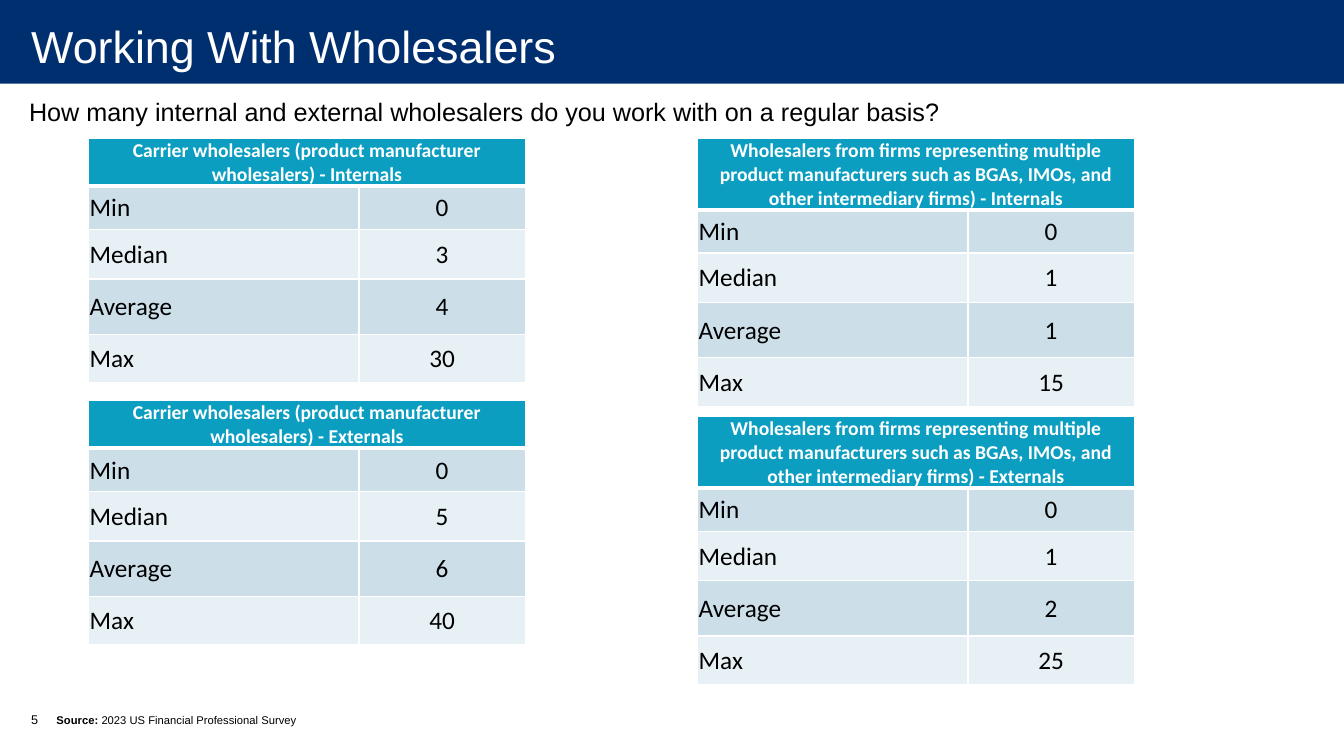
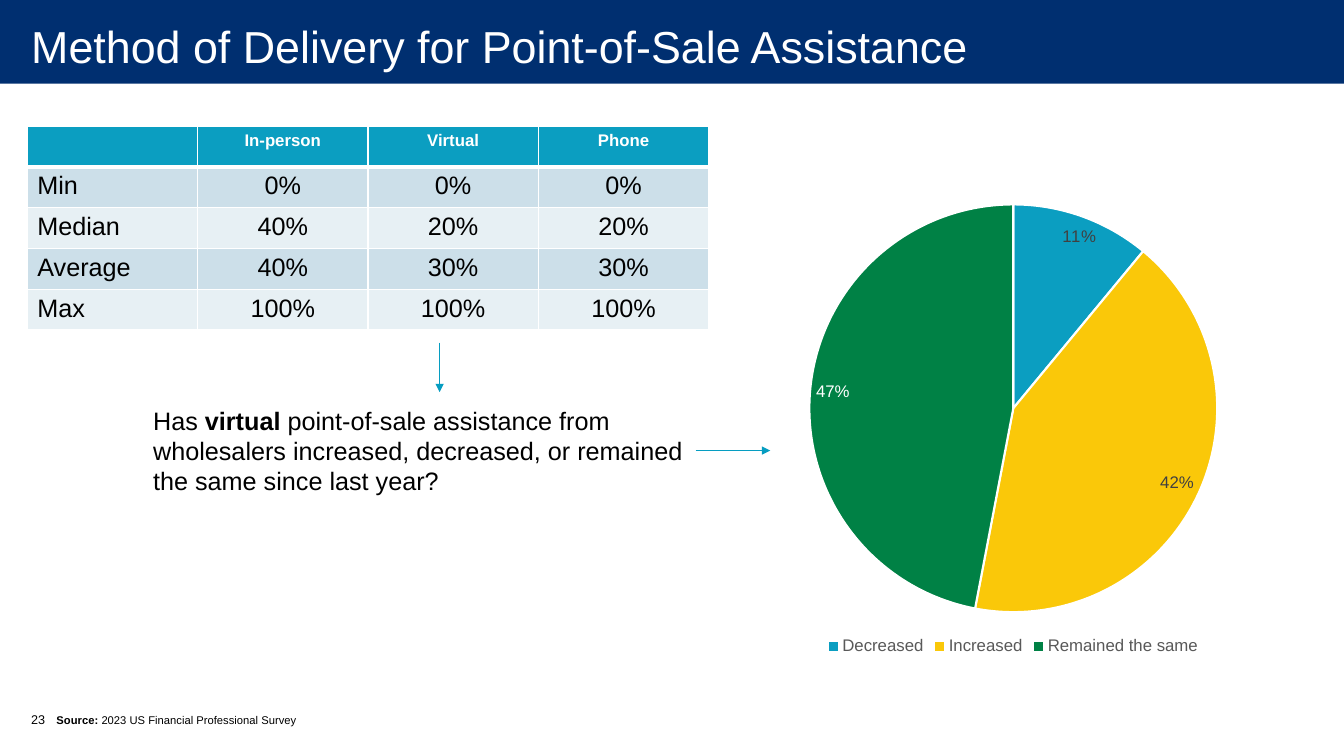
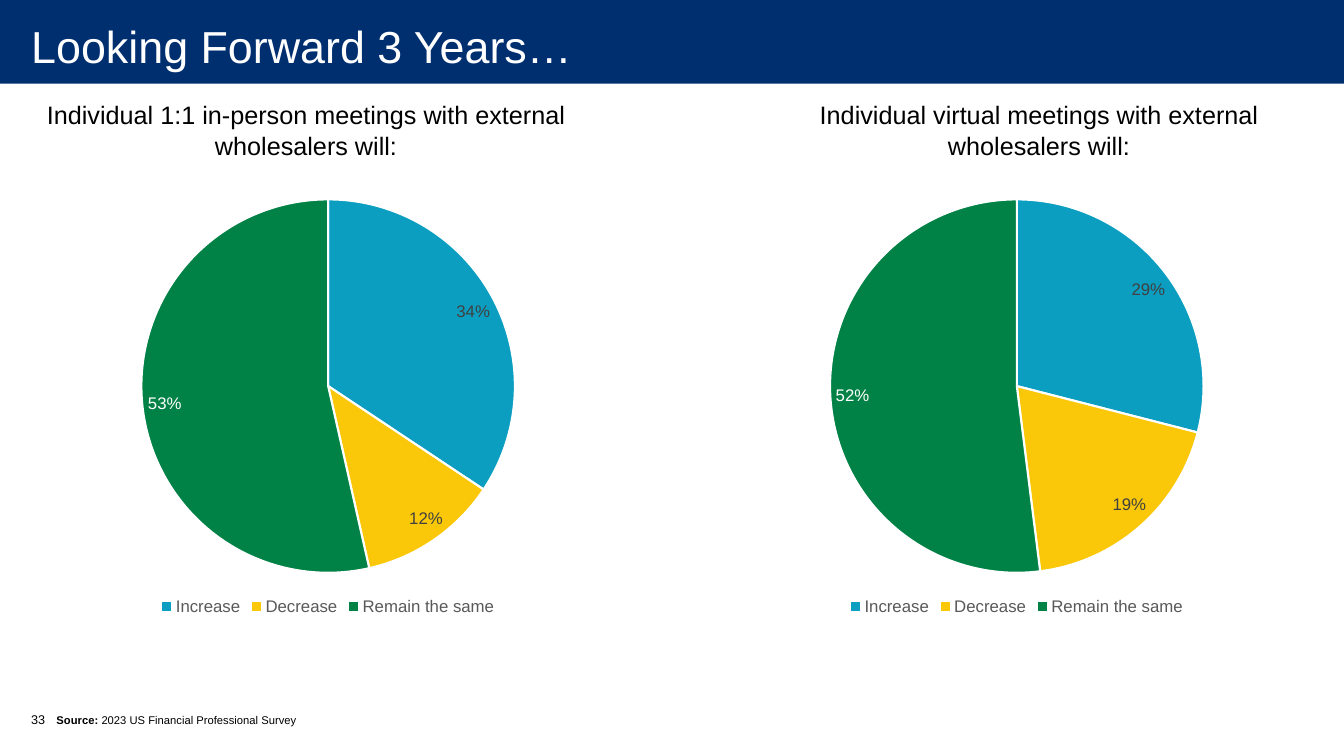
from lxml import etree
from pptx import Presentation
from pptx.chart.data import CategoryChartData
from pptx.dml.color import RGBColor
from pptx.enum import chart as charts, shapes, text
from pptx.oxml.ns import qn
from pptx.util import Inches, Pt

NAVY = RGBColor(0x00, 0x2F, 0x70)
TEAL = RGBColor(0x0B, 0x9E, 0xC1)
ARROW_TEAL = RGBColor(0x06, 0x9D, 0xC1)
YELLOW = RGBColor(0xFA, 0xC8, 0x09)
GREEN = RGBColor(0x00, 0x81, 0x45)
ROW_DARK = RGBColor(0xCC, 0xDF, 0xE9)
ROW_LIGHT = RGBColor(0xE7, 0xF0, 0xF4)
LEGEND_GRAY = RGBColor(0x59, 0x59, 0x59)
LABEL_GRAY = RGBColor(0x40, 0x40, 0x40)
BLACK = RGBColor(0, 0, 0)
WHITE = RGBColor(255, 255, 255)

LEFT, CENTER = text.PP_ALIGN.LEFT, text.PP_ALIGN.CENTER
TOP, MIDDLE, BOTTOM = (text.MSO_ANCHOR.TOP, text.MSO_ANCHOR.MIDDLE,
                       text.MSO_ANCHOR.BOTTOM)

TITLE_STYLE = {"size": 32, "color": WHITE}
BODY_STYLE = {"size": 18, "color": BLACK}
SOURCE_STYLE = {"size": 8, "color": BLACK}
NUMBER_STYLE = {"size": 9, "color": BLACK}

SOURCE = [("Source: ", True), ("2023 US Financial Professional Survey", False)]
STATISTICS = ["Min", "Median", "Average", "Max"]

CARRIERS = "Carrier wholesalers (product manufacturer wholesalers) - "
INTERMEDIARIES = ("Wholesalers from firms representing multiple product manufacturers "
                  "such as BGAs, IMOs, and other intermediary firms) - ")
WHOLESALER_TABLES = [
    (0.88, 1.37, CARRIERS + "Internals", [0, 3, 4, 30]),
    (0.88, 3.97, CARRIERS + "Externals", [0, 5, 6, 40]),
    (6.92, 1.37, INTERMEDIARIES + "Internals", [0, 1, 1, 15]),
    (6.92, 4.13, INTERMEDIARIES + "Externals", [0, 1, 2, 25]),
]
WHOLESALER_QUESTION = ("How many internal and external wholesalers do you work with "
                       "on a regular basis?")
WHOLESALER_COLUMNS = [2.68, 1.65]
WHOLESALER_ROWS = [0.41, 0.43, 0.49, 0.55, 0.48]
TIGHT_CELL = {"margin_left": Inches(0.01), "margin_right": Inches(0.01),
              "margin_top": Inches(0.01), "margin_bottom": 0,
              "vertical_anchor": MIDDLE}

DELIVERY = {"In-person": [0, 40, 40, 100],
            "Virtual": [0, 20, 30, 100],
            "Phone": [0, 20, 30, 100]}
DELIVERY_QUESTION = [
    ("Has ", False), ("virtual", True),
    (" point-of-sale assistance from wholesalers increased, decreased, or remained "
     "the same since last year?", False)]
DELIVERY_CHANGE = {"Decreased": 0.11, "Increased": 0.42, "Remained the same": 0.47}
DELIVERY_ARROWS = [(4.36, 3.4, 4.36, 3.89), (6.9, 4.47, 7.64, 4.47)]

OUTLOOK_CATEGORIES = ["Increase", "Decrease", "Remain the same"]
OUTLOOKS = [
    (0.24, 0.46, "Individual 1:1 in-person meetings with external wholesalers will:",
     [0.34, 0.12, 0.53]),
    (7.51, 7.29, "Individual virtual meetings with external wholesalers will:",
     [0.29, 0.19, 0.52]),
]


def inches(values):
    return [Inches(value) for value in values]


def set_all(target, values):
    for name, value in values.items():
        setattr(target, name, value)


def set_font(font, size, color, name="Arial", bold=False):
    set_all(font, {"size": Pt(size), "name": name, "bold": bold})
    font.color.rgb = color


def write(frame, content, style, align=LEFT):
    paragraph = frame.paragraphs[0]
    paragraph.alignment = align
    runs = [(content, style.get("bold", False))] if isinstance(content, str) else content
    for words, bold in runs:
        run = paragraph.add_run()
        run.text = words
        set_font(run.font, **{**style, "bold": bold})
    return paragraph


def add_text(slide, box, content, style=BODY_STYLE, align=LEFT):
    frame = slide.shapes.add_textbox(*inches(box)).text_frame
    frame.word_wrap = True
    write(frame, content, style, align)


def prepare_layout(presentation):
    layout = presentation.slide_layouts[1]
    title, body = layout.placeholders[0], layout.placeholders[1]
    places = [
        (title, (0.01, -0.03, 13.32, 0.97), MIDDLE, (0.3, 0, 0.2, 0)),
        (body, (0.46, 6.54, 5.85, 0.72), BOTTOM, (0.1, 0.05, 0.1, 0.05)),
    ]
    for placeholder, box, anchor, margins in places:
        set_all(placeholder, dict(zip(("left", "top", "width", "height"), inches(box))))
        sides = ("margin_left", "margin_top", "margin_right", "margin_bottom")
        set_all(placeholder.text_frame, {
            **dict(zip(sides, inches(margins))), "vertical_anchor": anchor,
            "auto_size": text.MSO_AUTO_SIZE.NONE, "word_wrap": True})
    return layout


def add_band(slide):
    band = slide.shapes.add_shape(shapes.MSO_SHAPE.RECTANGLE,
                                  *inches((0, -0.03, 13.33, 0.86)))
    band.shadow.inherit = False
    band.fill.solid()
    band.fill.fore_color.rgb = NAVY
    band.line.fill.background()
    slide.slide_layout.shapes._spTree.insert(2, band._element)


def add_slide(presentation, layout, title, number):
    slide = presentation.slides.add_slide(layout)
    write(slide.shapes.title.text_frame, title, TITLE_STYLE)
    paragraph = write(slide.placeholders[1].text_frame, SOURCE, SOURCE_STYLE)
    properties = paragraph._p.get_or_add_pPr()
    properties.set("marL", "0")
    properties.set("indent", "0")
    etree.SubElement(properties, qn("a:buNone"))
    paragraph.space_before = Pt(0)
    add_text(slide, (0.21, 7.01, 0.49, 0.4), str(number), NUMBER_STYLE)
    return slide


def set_borders(cell, row):
    properties = cell._tc.get_or_add_tcPr()
    widths = {"L": 1, "R": 1, "T": 3 if row == 1 else 1, "B": 3 if row == 0 else 1}
    for position, (side, width) in enumerate(widths.items()):
        line = etree.Element(qn(f"a:ln{side}"), w=str(Pt(width)))
        fill = etree.SubElement(line, qn("a:solidFill"))
        etree.SubElement(fill, qn("a:srgbClr"), val=str(WHITE))
        properties.insert(position, line)


def add_table(slide, left, top, columns, heights, rows, font, header_size, cell_format):
    frame = slide.shapes.add_table(
        len(rows), len(columns), *inches((left, top, sum(columns), sum(heights))))
    table = frame.table
    for column, width in zip(table.columns, columns):
        column.width = Inches(width)
    for r, (row, height) in enumerate(zip(rows, heights)):
        table.rows[r].height = Inches(height)
        header = r == 0
        style = {"name": font, "bold": header, "size": header_size if header else 18,
                 "color": WHITE if header else BLACK}
        for c, value in enumerate(row):
            cell = table.cell(r, c)
            set_all(cell, cell_format)
            cell.fill.solid()
            cell.fill.fore_color.rgb = TEAL if header else (ROW_LIGHT, ROW_DARK)[r % 2]
            set_borders(cell, r)
            if value:
                write(cell.text_frame, value, style, CENTER if header or c else LEFT)
    return table


def add_pie(slide, box, values):
    data = CategoryChartData(number_format="0%")
    data.categories = list(values)
    data.add_series("Series 1", list(values.values()))
    chart = slide.shapes.add_chart(charts.XL_CHART_TYPE.PIE, *inches(box), data).chart
    set_font(chart.font, 10, BLACK)
    set_all(chart, {"has_title": False, "has_legend": True})
    set_all(chart.legend, {"position": charts.XL_LEGEND_POSITION.BOTTOM,
                           "include_in_layout": False})
    set_font(chart.legend.font, 12, LEGEND_GRAY)
    plot = chart.plots[0]
    set_all(plot, {"vary_by_categories": True, "has_data_labels": True})
    best_fit = charts.XL_LABEL_POSITION.BEST_FIT
    set_all(plot.data_labels, {"show_value": True, "show_percentage": False,
                               "number_format": "0%", "number_format_is_linked": False,
                               "position": best_fit})
    set_font(plot.data_labels.font, 12, LABEL_GRAY)
    label_colors = (LABEL_GRAY, LABEL_GRAY, WHITE)
    for i, (color, label_color) in enumerate(zip((TEAL, YELLOW, GREEN), label_colors)):
        point = plot.series[0].points[i]
        point.format.fill.solid()
        point.format.fill.fore_color.rgb = color
        point.format.line.color.rgb = WHITE
        point.format.line.width = Pt(1.5)
        set_font(point.data_label.font, 12, label_color)
        point.data_label.position = best_fit


def add_arrow(slide, ends):
    arrow = slide.shapes.add_connector(shapes.MSO_CONNECTOR.STRAIGHT, *inches(ends))
    arrow.line.color.rgb = ARROW_TEAL
    arrow.line.width = Pt(0.75)
    etree.SubElement(arrow.line._get_or_add_ln(), qn("a:tailEnd"), type="triangle")
    etree.SubElement(arrow._element.spPr, qn("a:effectLst"))


def fill_wholesalers(slide):
    add_text(slide, (0.19, 0.91, 12.8, 0.4), WHOLESALER_QUESTION)
    for left, top, heading, values in WHOLESALER_TABLES:
        rows = [(heading, "")] + [(name, str(value))
                                  for name, value in zip(STATISTICS, values)]
        table = add_table(slide, left, top, WHOLESALER_COLUMNS, WHOLESALER_ROWS, rows,
                          "Calibri", 14, TIGHT_CELL)
        table.cell(0, 0).merge(table.cell(0, 1))


def fill_delivery(slide):
    rows = [["", *DELIVERY]]
    for name, *values in zip(STATISTICS, *DELIVERY.values()):
        rows.append([name, *(f"{value}%" for value in values)])
    add_table(slide, 0.27, 1.25, [1.69] * 4, [0.405] * 5, rows, "Arial", 12,
              {"vertical_anchor": TOP})
    add_text(slide, (1.42, 3.97, 5.61, 1.01), DELIVERY_QUESTION)
    add_pie(slide, (6.67, 1.89, 6.76, 4.65), DELIVERY_CHANGE)
    for ends in DELIVERY_ARROWS:
        add_arrow(slide, ends)


def fill_outlook(slide):
    for text_left, chart_left, heading, values in OUTLOOKS:
        add_text(slide, (text_left, 0.94, 5.59, 0.71), heading, align=CENTER)
        add_pie(slide, (chart_left, 1.84, 5.59, 4.31),
                dict(zip(OUTLOOK_CATEGORIES, values)))


SLIDES = [
    ("Working With Wholesalers", 5, fill_wholesalers),
    ("Method of Delivery for Point-of-Sale Assistance", 23, fill_delivery),
    ("Looking Forward 3 Years…", 33, fill_outlook),
]


def main():
    presentation = Presentation()
    set_all(presentation, {"slide_width": Inches(13.33), "slide_height": Inches(7.5)})
    layout = prepare_layout(presentation)
    for title, number, fill_slide in SLIDES:
        slide = add_slide(presentation, layout, title, number)
        fill_slide(slide)
    add_band(slide)
    presentation.save("out.pptx")


if __name__ == "__main__":
    main()
